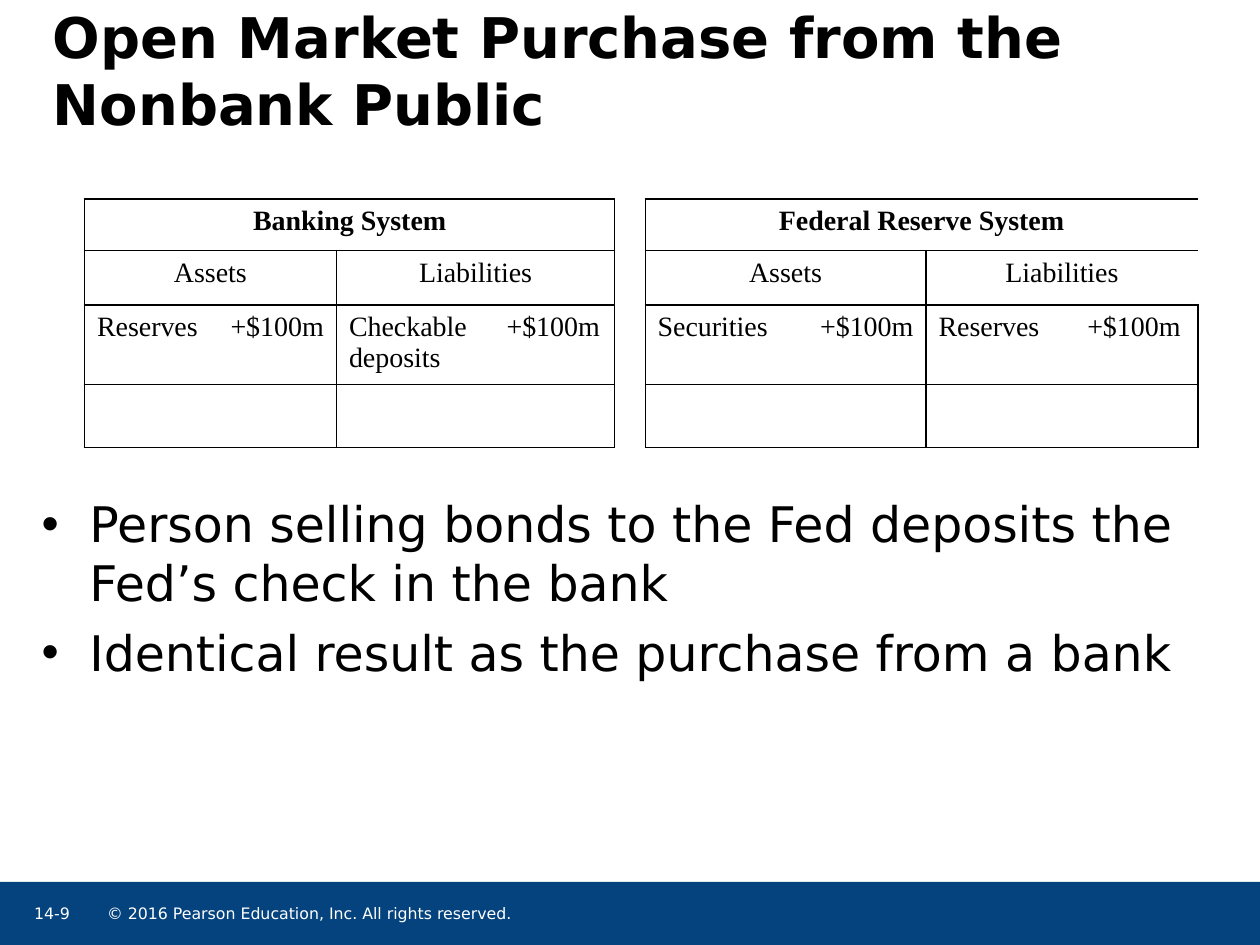
from pptx import Presentation
from pptx.dml.color import RGBColor
from pptx.enum.shapes import MSO_SHAPE
from pptx.enum.text import MSO_ANCHOR, PP_ALIGN
from pptx.oxml.ns import qn
from pptx.util import Inches, Pt
from lxml.etree import SubElement

COLORS = {"ink": "000000", "paper": "FFFFFF", "band": "04437D"}
SANS, SERIF = "DejaVu Sans", "Times New Roman"
LEFT, CENTER, RIGHT = PP_ALIGN.LEFT, PP_ALIGN.CENTER, PP_ALIGN.RIGHT

COLUMNS = [1, 1, 1.25, 0.96, 0.23, 1.15, 1.08, 1.18, 0.98]
ROWS = [0.41, 0.43, 0.63, 0.5]
GAP = 4  # empty column between the two accounts
RULES = [1, 1, 1.5, 1, 1]  # horizontal lines, top to bottom
ACCOUNTS = [
    (0, "Banking System", [("Reserves", RIGHT), ("Checkable deposits", LEFT)]),
    (5, "Federal Reserve System", [("Securities", RIGHT), ("Reserves", LEFT)]),
]


def cell_borders(row, column):
    """Line widths in points for one cell, by side; 0 means no line."""
    if column == GAP:
        return {"L": 0.5, "R": 0.5, "T": 0, "B": 0}
    lefts, rights = ((0, 5), (3, 8)) if row == 0 else ((0, 2, 5, 7), (1, 3, 6, 8))
    return {
        "L": (0.5 if column == GAP + 1 else 1) if column in lefts else 0,
        "R": (0.5 if column == GAP - 1 else 1) if column in rights else 0,
        "T": RULES[row],
        "B": RULES[row + 1],
    }


class SlideBuilder:
    def __init__(self, deck):
        self.page = deck.slides.add_slide(deck.slide_layouts[6])

    def color(self, name):
        return RGBColor.from_string(COLORS[name])

    def add_span(self, para, text, size, font=SANS, color="ink", bold=False):
        span = para.add_run()
        span.text = text
        style = {"name": font, "size": Pt(size), "bold": bold}
        for key, value in style.items():
            setattr(span.font, key, value)
        span.font.color.rgb = self.color(color)

    def band(self, left, top, width, height):
        shape = self.page.shapes.add_shape(
            MSO_SHAPE.RECTANGLE, *map(Inches, (left, top, width, height)))
        shape.shadow.inherit = False
        shape.fill.solid()
        shape.fill.fore_color.rgb = self.color("band")
        shape.line.fill.background()

    def text(self, place, lines, size, bullets=False, anchor=MSO_ANCHOR.TOP, **style):
        box = self.page.shapes.add_textbox(*map(Inches, place))
        frame = box.text_frame
        settings = {"word_wrap": True, "vertical_anchor": anchor, "margin_left": 0,
                    "margin_right": 0, "margin_top": 0, "margin_bottom": 0}
        for key, value in settings.items():
            setattr(frame, key, value)
        for index, line in enumerate(lines):
            para = frame.add_paragraph() if index else frame.paragraphs[0]
            if bullets:
                self.bullet(para)
            if index:
                para.space_before = Pt(6)
            self.add_span(para, line, size, **style)

    def bullet(self, para):
        properties = para._p.get_or_add_pPr()
        properties.set("marL", str(Inches(0.38)))
        properties.set("indent", str(-Inches(0.38)))
        SubElement(properties, qn("a:buFont"), typeface="Arial")
        SubElement(properties, qn("a:buChar"), char="•")

    def table(self, left, top):
        frame = self.page.shapes.add_table(
            len(ROWS), len(COLUMNS), Inches(left), Inches(top),
            Inches(sum(COLUMNS)), Inches(sum(ROWS)))
        grid = frame.table
        for column, width in zip(grid.columns, COLUMNS):
            column.width = Inches(width)
        for row, height in zip(grid.rows, ROWS):
            row.height = Inches(height)
        for row in range(len(ROWS)):
            for column in range(len(COLUMNS)):
                self.outline(grid.cell(row, column), cell_borders(row, column))
        return grid

    def outline(self, cell, widths):
        properties = cell._tc.get_or_add_tcPr()
        for side, width in widths.items():
            line = SubElement(properties, qn(f"a:ln{side}"), w=str(Pt(width)))
            if width:
                fill = SubElement(line, qn("a:solidFill"))
                SubElement(fill, qn("a:srgbClr"), val=COLORS["ink"])
            else:
                SubElement(line, qn("a:noFill"))
        cell.fill.background()

    def cell(self, grid, row, column, text, align, span=1, bold=False):
        cell = grid.cell(row, column)
        if span > 1:
            cell.merge(grid.cell(row, column + span - 1))
        para = cell.text_frame.paragraphs[0]
        para.alignment = align
        self.add_span(para, text, 16, font=SERIF, bold=bold)


def main():
    deck = Presentation()
    deck.slide_width, deck.slide_height = Inches(10), Inches(7.5)
    slide = SlideBuilder(deck)

    # Footer
    slide.band(0, 7, 10, 0.5)
    slide.text((0.85, 7.17, 5.9, 0.2),
               ["© 2016 Pearson Education, Inc. All rights reserved."], 9, color="paper")
    slide.text((0.27, 7.17, 0.39, 0.2), ["14-9"], 9, color="paper")

    # Title and bullets
    slide.text((0.42, 0.01, 9.25, 1.09), ["Open Market Purchase from the Nonbank Public"],
               32, anchor=MSO_ANCHOR.MIDDLE, bold=True)
    slide.text((0.33, 3.92, 9.33, 2.37),
               ["Person selling bonds to the Fed deposits the Fed’s check in the bank",
                "Identical result as the purchase from a bank"], 28, bullets=True)

    # T-accounts
    grid = slide.table(0.67, 1.58)
    grid.cell(0, GAP).merge(grid.cell(2, GAP))
    for start, name, entries in ACCOUNTS:
        slide.cell(grid, 0, start, name, CENTER, span=4, bold=True)
        for side, (item, align) in enumerate(entries):
            column = start + 2 * side
            heading = ("Assets", "Liabilities")[side]
            slide.cell(grid, 1, column, heading, CENTER, span=2)
            slide.cell(grid, 2, column, item, LEFT)
            slide.cell(grid, 2, column + 1, "+$100m", align)

    deck.save("out.pptx")


if __name__ == "__main__":
    main()
